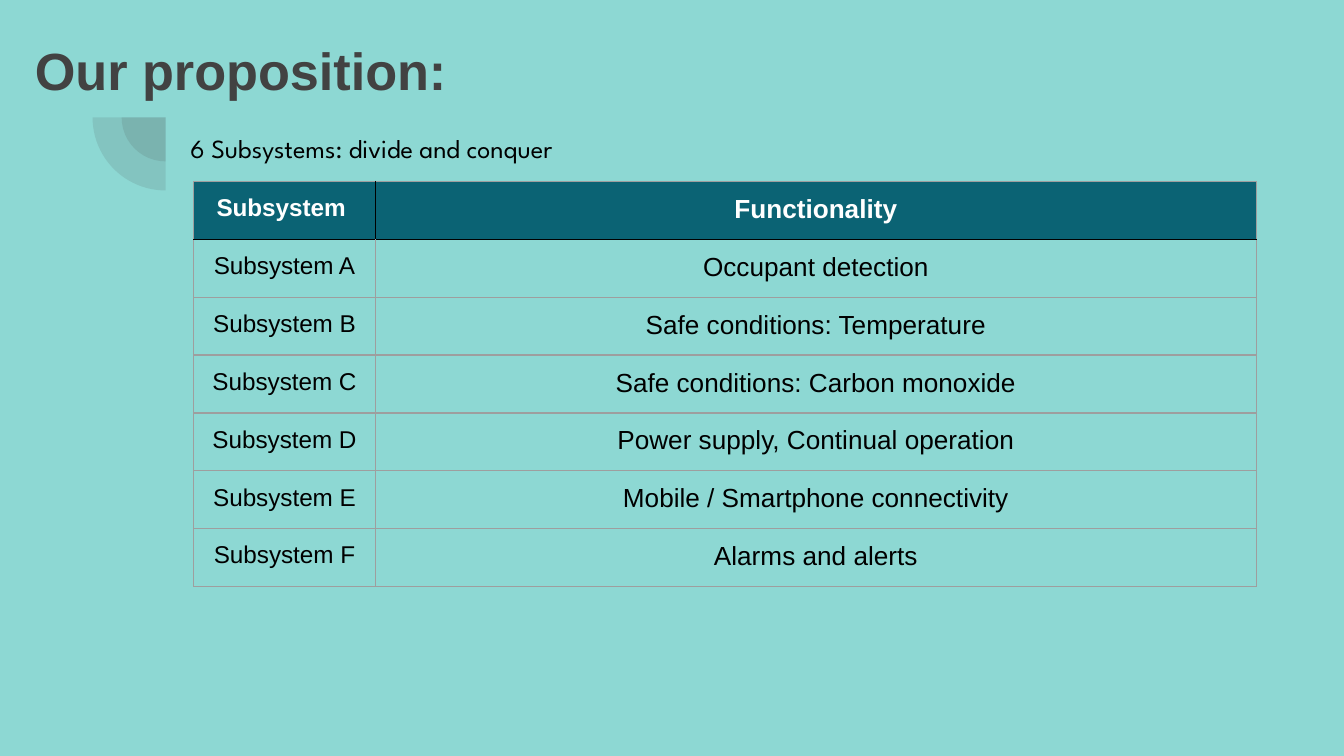
from lxml.etree import SubElement
from pptx import Presentation
from pptx.dml.color import RGBColor
from pptx.enum.shapes import MSO_SHAPE
from pptx.enum.text import PP_ALIGN
from pptx.oxml.ns import qn
from pptx.util import Cm, Pt

BACKGROUND = "8DD8D3"
CHARCOAL = "424242"
HEADER = "0B6374"
GRID = "9E9E9E"
BLACK = "000000"
WHITE = "FFFFFF"
INSET = Cm(0.25)

ROWS = [
    ("Subsystem ", "Functionality"),
    ("Subsystem A", "Occupant detection"),
    ("Subsystem B", "Safe conditions: Temperature"),
    ("Subsystem C", "Safe conditions: Carbon monoxide"),
    ("Subsystem D", "Power supply, Continual operation"),
    ("Subsystem E", "Mobile / Smartphone connectivity"),
    ("Subsystem F", "Alarms and alerts"),
]


def color(hex_code):
    return RGBColor.from_string(hex_code)


def write(frame, text, size=14, font="Arial", ink=BLACK, bold=False,
          align=PP_ALIGN.LEFT, spacing=None):
    para = frame.paragraphs[0]
    para.alignment = align
    para.line_spacing = spacing
    span = para.add_run()
    span.text = text
    span.font.name = font
    span.font.size = Pt(size)
    span.font.bold = bold
    span.font.color.rgb = color(ink)


def set_border(cell, side, ink):
    """Draw one cell edge; side is L, R, T or B, called in that order."""
    line = SubElement(cell._tc.get_or_add_tcPr(), qn(f"a:ln{side}"), w=str(Pt(0.75)))
    fill = SubElement(line, qn("a:solidFill"))
    SubElement(fill, qn("a:srgbClr"), val=ink)


class SlideBuilder:
    def __init__(self, deck):
        self.page = deck.slides.add_slide(deck.slide_layouts[6])
        fill = self.page.background.fill
        fill.solid()
        fill.fore_color.rgb = color(BACKGROUND)

    def quarter_disc(self, center_x, center_y, radius):
        left, top = Cm(center_x - radius), Cm(center_y - radius)
        disc = self.page.shapes.add_shape(
            MSO_SHAPE.PIE, left, top, Cm(2 * radius), Cm(2 * radius))
        disc.adjustments[0], disc.adjustments[1] = 108, 162
        disc.rotation = 270
        disc.shadow.inherit = False
        disc.line.fill.background()
        disc.fill.solid()
        disc.fill.fore_color.rgb = color(CHARCOAL)
        tint = disc.fill._xPr.find(qn("a:solidFill"))[0]
        SubElement(tint, qn("a:alpha"), val="13000")

    def text(self, left, top, width, height, text, **style):
        box = self.page.shapes.add_textbox(Cm(left), Cm(top), Cm(width), Cm(height))
        frame = box.text_frame
        frame.word_wrap = True
        frame.margin_left = frame.margin_right = INSET
        frame.margin_top = frame.margin_bottom = INSET
        write(frame, text, **style)

    def table(self, left, top, widths, row_height, rows):
        table = self.page.shapes.add_table(
            len(rows), len(widths), Cm(left), Cm(top),
            Cm(sum(widths)), Cm(row_height * len(rows))).table
        table.horz_banding = False
        for column, width in zip(table.columns, widths):
            column.width = Cm(width)
        for row_index, row in enumerate(rows):
            for column_index, text in enumerate(row):
                self.cell(table.cell(row_index, column_index), text,
                          row_index, column_index)

    def cell(self, cell, text, row, column):
        is_header = row == 0
        cell.margin_left = cell.margin_right = INSET
        cell.margin_top = cell.margin_bottom = INSET
        edges = {
            "L": BLACK if is_header and column == 1 else GRID,
            "R": BLACK if is_header and column == 0 else GRID,
            "T": BLACK if row == 1 else GRID,
            "B": BLACK if is_header else GRID,
        }
        for side, ink in edges.items():
            set_border(cell, side, ink)
        if is_header:
            cell.fill.solid()
            cell.fill.fore_color.rgb = color(HEADER)
        else:
            cell.fill.background()
        write(cell.text_frame, text, size=13 if column == 0 else 14,
              ink=WHITE if is_header else BLACK, bold=is_header,
              align=PP_ALIGN.CENTER)


def main():
    deck = Presentation()
    deck.slide_width, deck.slide_height = Cm(25.4), Cm(14.29)
    slide = SlideBuilder(deck)
    for radius in (0.83, 1.38):
        slide.quarter_disc(3.13, 2.22, radius)
    slide.text(0.41, 0.36, 19.53, 2.77, "Our proposition:",
               size=28, ink=CHARCOAL, bold=True, spacing=1.1)
    slide.text(3.35, 2.26, 19.53, 1.12, "6 Subsystems: divide and conquer",
               font="League Spartan")
    slide.table(3.66, 3.43, (3.43, 16.66), 1.09, ROWS)
    deck.save("out.pptx")


if __name__ == "__main__":
    main()
